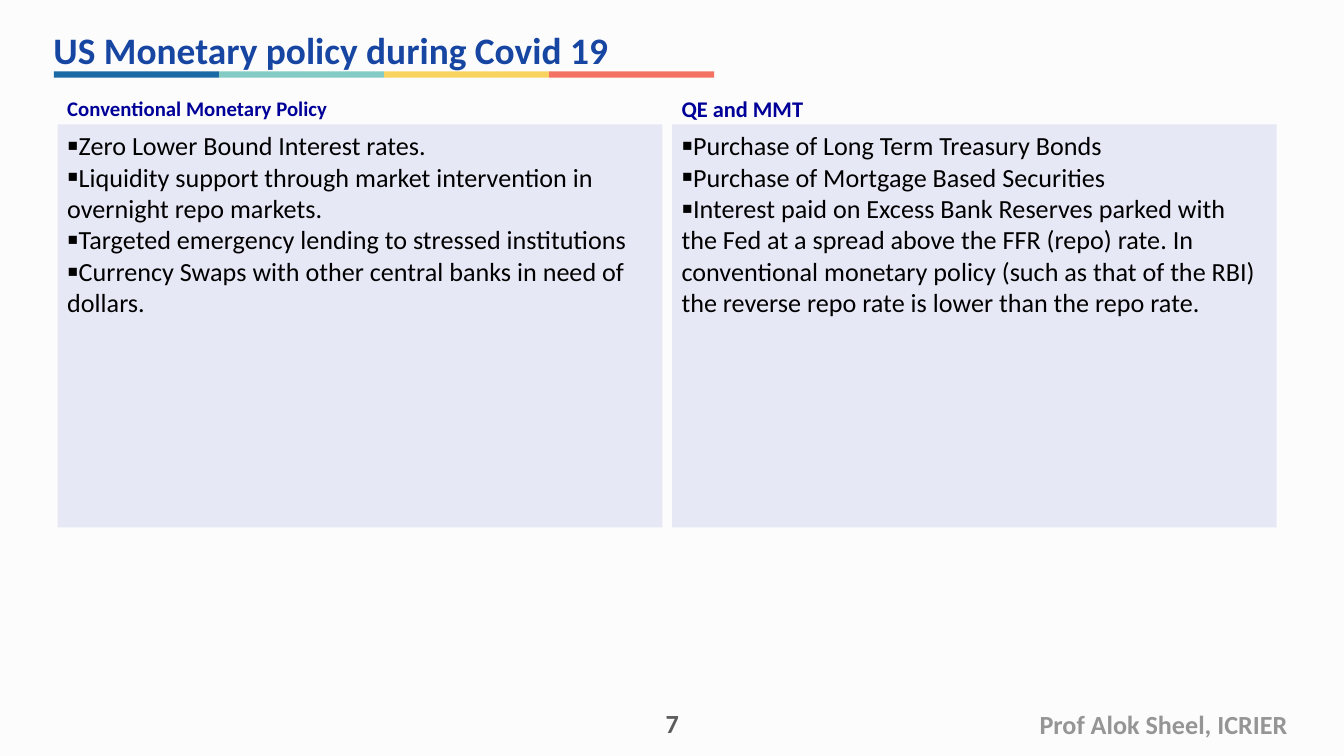
from dataclasses import dataclass

from lxml import etree
from pptx import Presentation
from pptx.dml.color import RGBColor
from pptx.enum.shapes import MSO_SHAPE
from pptx.enum.text import MSO_ANCHOR, MSO_AUTO_SIZE, PP_ALIGN
from pptx.oxml.ns import qn
from pptx.util import Cm, Pt

RECT = MSO_SHAPE.RECTANGLE
TOP, MID, LOW = MSO_ANCHOR.TOP, MSO_ANCHOR.MIDDLE, MSO_ANCHOR.BOTTOM
LEFT, MEAN, RIGHT = PP_ALIGN.LEFT, PP_ALIGN.CENTER, PP_ALIGN.RIGHT
FIXED = MSO_AUTO_SIZE.NONE


@dataclass(frozen=True)
class Theme:
    face: str = "Calibri"
    page: str = "FCFCFC"
    title: str = "1645A2"
    head: str = "000099"
    text: str = "000000"
    panel: str = "E7E8F6"
    foot: str = "959595"
    count: str = "5C5C5C"
    bars: tuple = ("1B6AA3", "84CBC5", "F8D35E", "F47264")
    large: float = 20
    base: float = 14
    small: float = 12
    tight: float = 11.1


THEME = Theme()

COLS = [
    ("Conventional Monetary Policy", THEME.tight, [
        "Zero Lower Bound Interest rates.",
        "Liquidity support through market intervention in overnight repo markets.",
        "Targeted emergency lending to stressed institutions",
        "Currency Swaps with other central banks in need of dollars.",
    ]),
    ("QE and MMT", THEME.small, [
        "Purchase of Long Term Treasury Bonds",
        "Purchase of Mortgage Based Securities",
        "Interest paid on Excess Bank Reserves parked with the Fed at a spread "
        "above the FFR (repo) rate. In conventional monetary policy (such as that "
        "of the RBI) the reverse repo rate is lower than the repo rate.",
    ]),
]


def apply(item, form):
    for key, value in form.items():
        setattr(item, key, value)


def paint(fill, tone):
    fill.solid()
    fill.fore_color.rgb = RGBColor.from_string(tone)


def place(shape, left, top, width, height):
    apply(shape, {"left": Cm(left), "top": Cm(top),
                  "width": Cm(width), "height": Cm(height)})


def mark(para):
    props = para._p.get_or_add_pPr()
    props.set("marL", "0")
    props.set("indent", "0")
    etree.SubElement(props, qn("a:buSzPct")).set("val", "125000")
    etree.SubElement(props, qn("a:buChar")).set("char", "▪")


def write(shape, lines, size, tone, bold=True, align=LEFT, anchor=MID,
          inset=(0.18, 0.1), bullet=False):
    frame = shape.text_frame
    side, edge = map(Cm, inset)
    apply(frame, {"text": "\n".join(lines), "word_wrap": True,
                  "auto_size": FIXED, "vertical_anchor": anchor,
                  "margin_left": side, "margin_right": side,
                  "margin_top": edge, "margin_bottom": edge})
    for para in frame.paragraphs:
        apply(para, {"alignment": align, "space_before": Pt(0)})
        if bullet:
            mark(para)
        for run in para.runs:
            apply(run.font, {"name": THEME.face, "size": Pt(size), "bold": bold})
            run.font.color.rgb = RGBColor.from_string(tone)


def add_bars(slide):
    width = 3.12
    for i, tone in enumerate(THEME.bars):
        bar = slide.shapes.add_shape(RECT, 0, 0, 0, 0)
        place(bar, 1.02 + i * width, 1.35, width, 0.12)
        paint(bar.fill, tone)
        bar.line.fill.background()
        bar.shadow.inherit = False


def add_note(slide, spot, text, tone, align, anchor):
    box = slide.shapes.add_textbox(0, 0, 0, 0)
    place(box, *spot)
    write(box, [text], THEME.base, tone, align=align, anchor=anchor,
          inset=(0.25, 0.13))


def fill_col(head, body, left, col):
    label, size, lines = col
    place(head, left, 1.74, 11.43, 0.61)
    write(head, [label], size, THEME.head)
    place(body, left, 2.35, 11.43, 7.62)
    paint(body.fill, THEME.panel)
    write(body, lines, THEME.base, THEME.text, bold=False, anchor=TOP,
          bullet=True)


def main():
    deck = Presentation()
    apply(deck, {"slide_width": Cm(25.4), "slide_height": Cm(14.29)})
    slide = deck.slides.add_slide(deck.slide_layouts.get_by_name("Comparison"))
    paint(slide.background.fill, THEME.page)
    title, *parts = slide.placeholders
    place(title, 0.83, 0.53, 23.95, 0.82)
    write(title, ["US Monetary policy during Covid 19"], THEME.large, THEME.title)
    for i, col in enumerate(COLS):
        fill_col(*parts[2 * i:2 * i + 2], 1.09 + i * 11.61, col)
    add_bars(slide)
    add_note(slide, (17.6, 13.26, 6.99, 0.86), "Prof Alok Sheel, ICRIER",
             THEME.foot, RIGHT, TOP)
    add_note(slide, (12.07, 13.34, 1.27, 0.76), "7", THEME.count, MEAN, LOW)
    deck.save("out.pptx")


if __name__ == "__main__":
    main()
